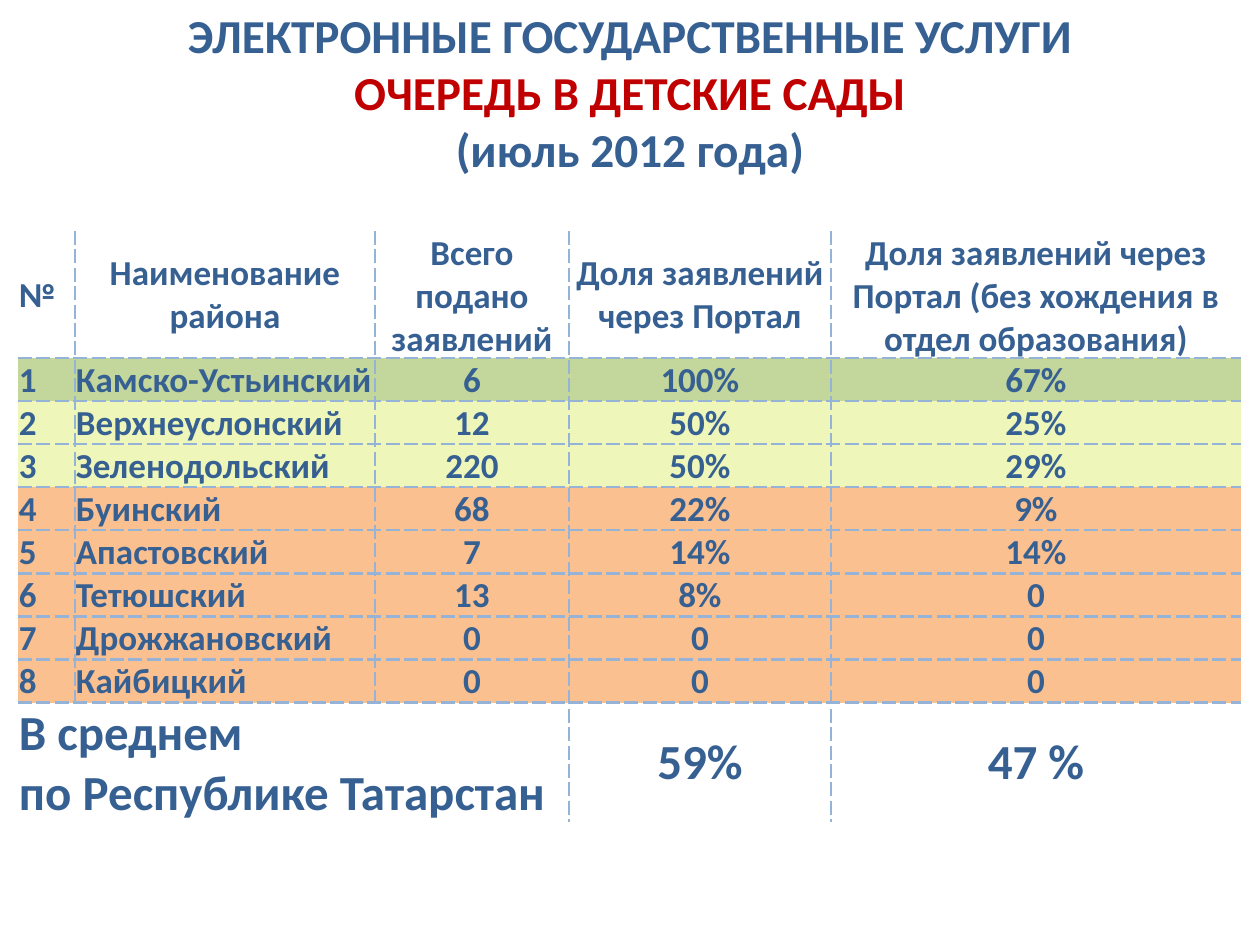
from dataclasses import dataclass
from lxml.etree import SubElement
from pptx import Presentation
from pptx.dml.color import RGBColor
from pptx.enum.text import MSO_ANCHOR as Anchor, MSO_AUTO_SIZE as AutoSize, PP_ALIGN as Align
from pptx.oxml.ns import qn
from pptx.util import Pt

SCALE = 914400 / 126


def px(n: int) -> int:
    return round(n * SCALE)


@dataclass(frozen=True)
class Theme:
    font: str = "Calibri"
    text: str = "376092"
    accent: str = "C00000"
    border: str = "95B3D7"
    high: str = "C3D69B"
    medium: str = "EEF7B9"
    low: str = "FAC090"
    title_size: int = 27
    body_size: int = 20
    total_size: int = 28


THEME = Theme()


@dataclass(frozen=True)
class Row:
    values: tuple[str, ...]
    height: int = 43
    fill: str | None = None
    size: int = THEME.body_size


TITLE = (
    ("ЭЛЕКТРОННЫЕ ГОСУДАРСТВЕННЫЕ УСЛУГИ", THEME.text),
    ("ОЧЕРЕДЬ В ДЕТСКИЕ САДЫ", THEME.accent),
    ("(июль 2012 года)", THEME.text),
)
COLUMN_WIDTHS = (57, 300, 194, 262, 410)
TOTAL_SPAN = 3
ROWS = (
    Row(("№", "Наименование района", "Всего подано заявлений", "Доля заявлений через Портал",
         "Доля заявлений через Портал (без хождения в отдел образования)"), 127),
    Row(("1", "Камско-Устьинский", "6", "100%", "67%"), fill=THEME.high),
    Row(("2", "Верхнеуслонский", "12", "50%", "25%"), fill=THEME.medium),
    Row(("3", "Зеленодольский", "220", "50%", "29%"), fill=THEME.medium),
    Row(("4", "Буинский", "68", "22%", "9%"), fill=THEME.low),
    Row(("5", "Апастовский", "7", "14%", "14%"), fill=THEME.low),
    Row(("6", "Тетюшский", "13", "8%", "0"), fill=THEME.low),
    Row(("7", "Дрожжановский", "0", "0", "0"), fill=THEME.low),
    Row(("8", "Кайбицкий", "0", "0", "0"), fill=THEME.low),
    Row(("В среднем\nпо Республике Татарстан", "", "", "59%", "47 %"), 119, size=THEME.total_size),
)


def format_paragraph(p, size: int, color: str, align: Align) -> None:
    p.alignment = align
    for r in p.runs:
        r.font.name = THEME.font
        r.font.size = Pt(size)
        r.font.bold = True
        r.font.color.rgb = RGBColor.from_string(color)


def add_title(slide) -> None:
    sp = slide.shapes.title
    sp.left, sp.top, sp.width, sp.height = 0, 0, px(1260), px(184)
    tf = sp.text_frame
    tf.word_wrap = True
    tf.auto_size = AutoSize.SHAPE_TO_FIT_TEXT
    tf.vertical_anchor = Anchor.TOP
    tf.text = "\n".join(text for text, _ in TITLE)
    for p, (_, color) in zip(tf.paragraphs, TITLE):
        format_paragraph(p, THEME.title_size, color, Align.CENTER)


def set_borders(cell, sides: dict[str, bool]) -> None:
    tc_pr = cell._tc.get_or_add_tcPr()
    for side, visible in sides.items():
        ln = SubElement(tc_pr, qn(f"a:ln{side}"), w=str(Pt(1.5)))
        if visible:
            fill = SubElement(ln, qn("a:solidFill"))
            SubElement(fill, qn("a:srgbClr"), val=THEME.border)
            SubElement(ln, qn("a:prstDash"), val="sysDash")
        else:
            SubElement(ln, qn("a:noFill"))


def fill_cell(cell, row: Row, i: int, j: int) -> None:
    last_row, last_col = len(ROWS) - 1, len(COLUMN_WIDTHS) - 1
    total = i == last_row
    set_borders(cell, {
        "L": j > 0 and not (total and j < TOTAL_SPAN),
        "R": j < last_col and not (total and 0 < j < TOTAL_SPAN - 1),
        "T": i > 0,
        "B": i < last_row,
    })
    if row.fill:
        cell.fill.solid()
        cell.fill.fore_color.rgb = RGBColor.from_string(row.fill)
    else:
        cell.fill.background()
    cell.margin_left = cell.margin_right = cell.margin_top = px(1)
    cell.margin_bottom = 0
    cell.vertical_anchor = Anchor.BOTTOM if row.fill and j == 1 else Anchor.MIDDLE
    if cell.is_spanned:
        return
    cell.text_frame.text = row.values[j]
    align = Align.LEFT if j == 0 or (row.fill and j == 1) else Align.CENTER
    for p in cell.text_frame.paragraphs:
        format_paragraph(p, row.size, THEME.text, align)


def add_queue_table(slide) -> None:
    frame = slide.shapes.add_table(
        len(ROWS), len(COLUMN_WIDTHS), px(18), px(231),
        px(sum(COLUMN_WIDTHS)), px(sum(row.height for row in ROWS)))
    table = frame.table
    table.first_row = table.horz_banding = False
    for column, width in zip(table.columns, COLUMN_WIDTHS):
        column.width = px(width)
    last = len(ROWS) - 1
    table.cell(last, 0).merge(table.cell(last, TOTAL_SPAN - 1))
    for i, row in enumerate(ROWS):
        table.rows[i].height = px(row.height)
        for j in range(len(COLUMN_WIDTHS)):
            fill_cell(table.cell(i, j), row, i, j)


def main() -> None:
    prs = Presentation()
    prs.slide_width, prs.slide_height = px(1260), px(945)
    slide = prs.slides.add_slide(prs.slide_layouts[5])
    add_title(slide)
    add_queue_table(slide)
    prs.save("out.pptx")


if __name__ == "__main__":
    main()
